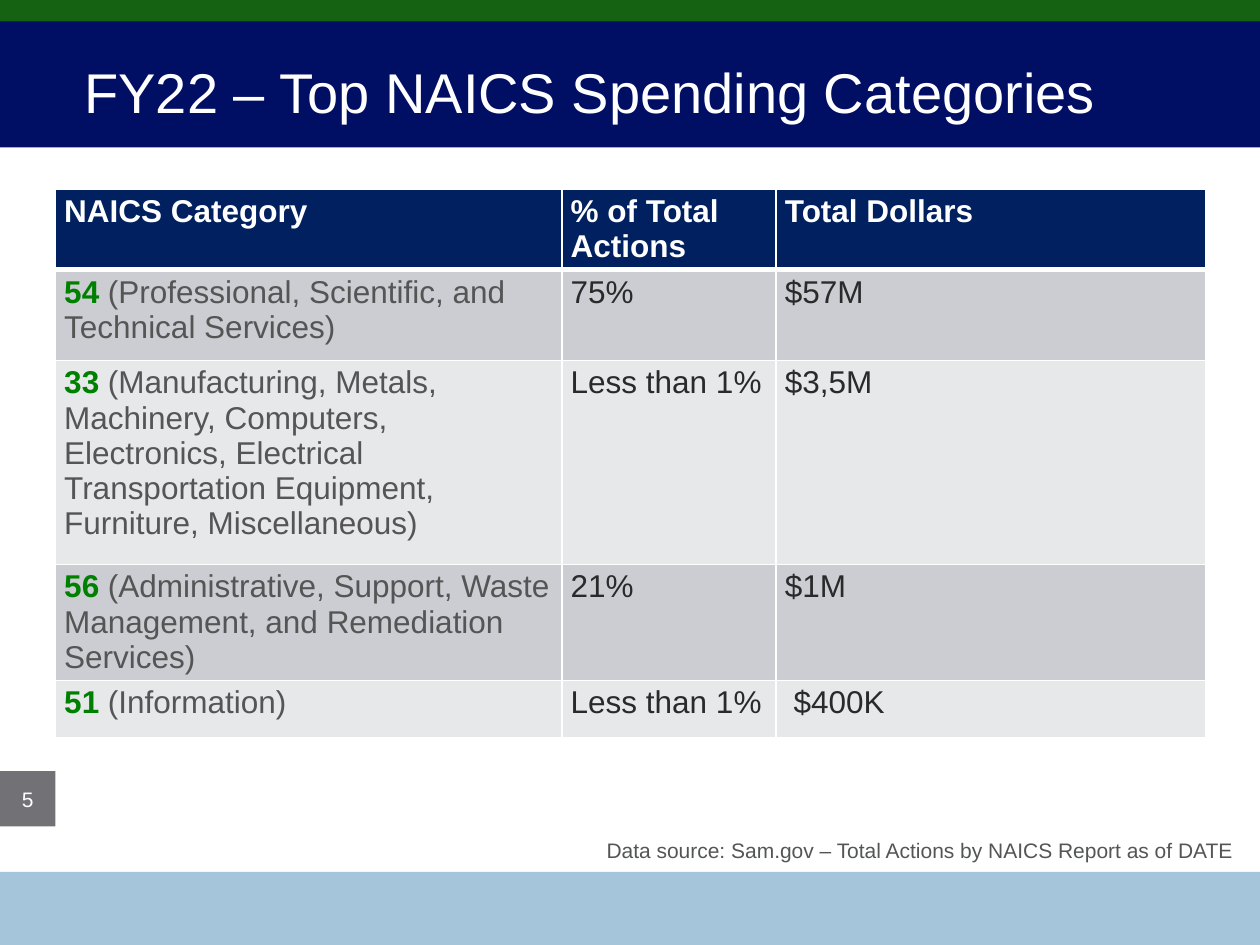
from lxml import etree
from pptx import Presentation, util as u
from pptx.dml.color import RGBColor
from pptx.enum import shapes, text
from pptx.oxml.ns import qn

COLORS = {
    "navy": "000F64", "sky": "A5C5DA", "green": "156312", "header": "002060",
    "odd": "CCCDD2", "even": "E7E8EA", "code": "008000", "name": "555555",
    "value": "2A2A2A", "badge": "727176", "source": "545555", "white": "FFFFFF",
}
COLUMNS, ROWS = 100, 75


class Deck:
    font = "Arial"

    def __init__(self, width, height):
        self.deck = Presentation()
        self.deck.slide_width, self.deck.slide_height = u.Inches(width), u.Inches(height)
        self.slide = self.deck.slides.add_slide(self.deck.slide_layouts[5])

    def across(self, columns):
        return round(self.deck.slide_width * columns / COLUMNS)

    def down(self, rows):
        return round(self.deck.slide_height * rows / ROWS)

    def place(self, left, top, width, height):
        return self.across(left), self.down(top), self.across(width), self.down(height)

    def paint(self, fill, color):
        fill.solid()
        fill.fore_color.rgb = RGBColor.from_string(COLORS[color])

    def add_words(self, paragraph, words, size, color, bold=False):
        run = paragraph.add_run()
        run.text = words
        run.font.name, run.font.size, run.font.bold = self.font, u.Pt(size), bold
        run.font.color.rgb = RGBColor.from_string(COLORS[color])

    def band(self, area, color):
        band = self.slide.shapes.add_shape(shapes.MSO_SHAPE.RECTANGLE, *self.place(*area))
        band.shadow.inherit = False
        self.paint(band.fill, color)
        band.line.fill.background()
        return band

    def title(self, area, words):
        title = self.slide.shapes.title
        title.left, title.top, title.width, title.height = self.place(*area)
        frame = title.text_frame
        frame.auto_size = text.MSO_AUTO_SIZE.NONE
        frame.vertical_anchor = text.MSO_ANCHOR.MIDDLE
        frame.margin_left = frame.margin_right = 0
        frame.paragraphs[0].alignment = text.PP_ALIGN.LEFT
        self.add_words(frame.paragraphs[0], words, 32, "white")
        self.slide.shapes._spTree.append(title._element)

    def badge(self, area, number):
        frame = self.band(area, "badge").text_frame
        frame.margin_left = frame.margin_right = u.Inches(0.07)
        frame.vertical_anchor = text.MSO_ANCHOR.MIDDLE
        frame.paragraphs[0].alignment = text.PP_ALIGN.CENTER
        self.add_words(frame.paragraphs[0], number, 12, "white")

    def note(self, area, words):
        frame = self.slide.shapes.add_textbox(*self.place(*area)).text_frame
        frame.word_wrap = True
        frame.auto_size = text.MSO_AUTO_SIZE.SHAPE_TO_FIT_TEXT
        frame.paragraphs[0].alignment = text.PP_ALIGN.RIGHT
        self.add_words(frame.paragraphs[0], words, 12, "source")

    def border(self, cell, side, points):
        properties = cell._tc.get_or_add_tcPr()
        line = etree.SubElement(properties, qn(f"a:ln{side}"), w=str(u.Pt(points)))
        fill = etree.SubElement(line, qn("a:solidFill"))
        etree.SubElement(fill, qn("a:srgbClr"), val=COLORS["white"])

    def cell(self, cell, runs, fill, top=1, bottom=1):
        for side, points in zip("LRTB", (1, 1, top, bottom)):
            self.border(cell, side, points)
        self.paint(cell.fill, fill)
        cell.margin_left = cell.margin_right = u.Inches(0.07)
        cell.margin_top = cell.margin_bottom = u.Inches(0.04)
        for words, color, bold in runs:
            self.add_words(cell.text_frame.paragraphs[0], words, 18, color, bold)

    def table(self, area, widths, heights, headings, records):
        table = self.slide.shapes.add_table(
            len(heights), len(widths), *self.place(*area)).table
        for column, width in zip(table.columns, widths):
            column.width = self.across(width)
        for row, height in zip(table.rows, heights):
            row.height = self.down(height)
        for column, heading in enumerate(headings):
            self.cell(table.cell(0, column), [(heading, "white", True)], "header", bottom=3)
        for row, (code, name, *values) in enumerate(records, 1):
            fill = "odd" if row % 2 else "even"
            category = [(code, "code", True), (f" {name}", "name", False)]
            entries = [category] + [[(value, "value", False)] for value in values]
            for column, runs in enumerate(entries):
                self.cell(table.cell(row, column), runs, fill, top=3 if row == 1 else 1)


def main():
    deck = Deck(10, 7.5)
    deck.band((0, 0, COLUMNS, 11.7), "navy")
    deck.band((0, 69.2, COLUMNS, 5.8), "sky")
    deck.band((0, 0, COLUMNS, 1.7), "green")
    deck.title((6.7, 5.3, 90.1, 3.8), "FY22 – Top NAICS Spending Categories")
    deck.table(
        (4.4, 15, 91.3, 44.5),
        widths=(40.2, 17, 34.1),
        heights=(4.7, 7.2, 16.2, 4.6, 4.6),
        headings=("NAICS Category", "% of Total Actions", "Total Dollars"),
        records=(
            ("54", "(Professional, Scientific, and Technical Services)", "75%", "$57M"),
            ("33", "(Manufacturing, Metals, Machinery, Computers, Electronics, Electrical "
                   "Transportation Equipment, Furniture, Miscellaneous)",
             "Less than 1%", "$3,5M"),
            ("56", "(Administrative, Support, Waste Management, and Remediation Services)",
             "21%", "$1M"),
            ("51", "(Information)", "Less than 1%", " $400K"),
        ),
    )
    deck.badge((0, 61.2, 4.4, 4.4), "5")
    deck.note((30.3, 66, 68.6, 3),
              "Data source: Sam.gov – Total Actions by NAICS Report as of DATE")
    deck.deck.save("out.pptx")


if __name__ == "__main__":
    main()
